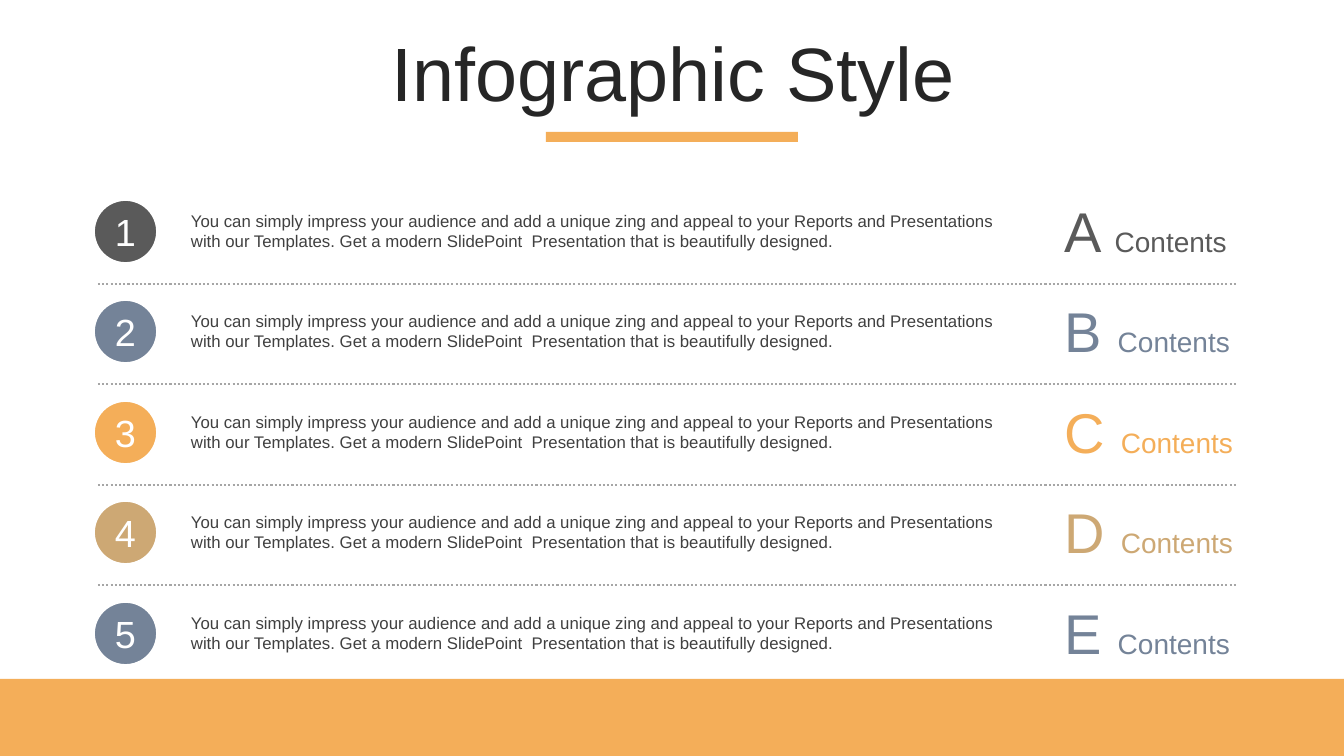
from lxml import etree
from pptx import Presentation
from pptx.dml.color import RGBColor
from pptx.enum.dml import MSO_LINE
from pptx.enum.shapes import MSO_CONNECTOR, MSO_SHAPE
from pptx.enum.text import MSO_ANCHOR, MSO_AUTO_SIZE, PP_ALIGN
from pptx.oxml.ns import qn
from pptx.util import Pt

RECTANGLE = MSO_SHAPE.RECTANGLE
OVAL = MSO_SHAPE.OVAL
STRAIGHT = MSO_CONNECTOR.STRAIGHT
DOTTED = MSO_LINE.ROUND_DOT
CENTER = PP_ALIGN.CENTER
MIDDLE = MSO_ANCHOR.MIDDLE
FIT_SHAPE = MSO_AUTO_SIZE.SHAPE_TO_FIT_TEXT
NO_FIT = MSO_AUTO_SIZE.NONE

SLIDE_WIDTH, SLIDE_HEIGHT = 1344, 756
SCALE = 12192000 / SLIDE_WIDTH
FONT = "Arial"
COLORS = {
    "title": "262626",
    "body": "404040",
    "divider": "A6A6A6",
    "white": "FFFFFF",
    "gray": "5A5A5A",
    "blue": "748398",
    "orange": "F4AE59",
    "tan": "CDA874",
}
DESCRIPTION = (
    "You can simply impress your audience and add a unique zing and appeal "
    "to your Reports and Presentations with our Templates. Get a modern "
    "SlidePoint  Presentation that is beautifully designed."
)
ROWS = [("A", "gray"), ("B", "blue"), ("C", "orange"), ("D", "tan"), ("E", "blue")]
FIRST_ROW_TOP = 200
ROW_PITCH_DOUBLED = 201


def emu(*lengths):
    return [round(length * SCALE) for length in lengths]


def rgb(color):
    return RGBColor.from_string(COLORS[color])


class InfographicSlide:
    def __init__(self, presentation):
        self.slide = presentation.slides.add_slide(presentation.slide_layouts[5])
        self.shapes = self.slide.shapes

    def style(self, font, size, color):
        font.name = FONT
        font.size = Pt(size)
        font.color.rgb = rgb(color)

    def title(self, text, left, top, width, height):
        shape = self.shapes.title
        shape.left, shape.top, shape.width, shape.height = emu(left, top, width, height)
        frame = shape.text_frame
        frame.text = text
        frame.auto_size = NO_FIT
        frame.vertical_anchor = MIDDLE
        paragraph = frame.paragraphs[0]
        paragraph.alignment = CENTER
        paragraph.line_spacing = 0.9
        paragraph.space_before = Pt(10)
        self.style(paragraph.font, 54, "title")

    def filled(self, kind, color, left, top, width, height):
        shape = self.shapes.add_shape(kind, *emu(left, top, width, height))
        shape.shadow.inherit = False
        shape.fill.solid()
        shape.fill.fore_color.rgb = rgb(color)
        shape.line.fill.background()
        return shape

    def badge(self, number, color, left, top, size):
        shape = self.filled(OVAL, color, left, top, size, size)
        shape.line.color.rgb = rgb("white")
        shape.line.width = Pt(1.25)
        frame = shape.text_frame
        frame.margin_left = frame.margin_right = 0
        frame.margin_top = frame.margin_bottom = 0
        frame.vertical_anchor = MIDDLE
        frame.text = str(number)
        paragraph = frame.paragraphs[0]
        paragraph.alignment = CENTER
        self.style(paragraph.font, 27, "white")

    def text_box(self, left, top, width, height):
        frame = self.shapes.add_textbox(*emu(left, top, width, height)).text_frame
        frame.word_wrap = True
        frame.auto_size = FIT_SHAPE
        return frame.paragraphs[0]

    def description(self, text, left, top, width, height):
        paragraph = self.text_box(left, top, width, height)
        paragraph.text = text
        self.style(paragraph.font, 12, "body")

    def label(self, letter, color, left, top, width, height):
        paragraph = self.text_box(left, top, width, height)
        for text, size in ((letter + " ", 40), ("Contents", 20)):
            run = paragraph.add_run()
            run.text = text
            self.style(run.font, size, color)

    def divider(self, left, right, y):
        connector = self.shapes.add_connector(STRAIGHT, *emu(left, y, right, y))
        connector.line.color.rgb = rgb("divider")
        connector.line.width = Pt(1.5)
        connector.line.dash_style = DOTTED
        etree.SubElement(connector._element.spPr, qn("a:effectLst"))


def main():
    presentation = Presentation()
    presentation.slide_width, presentation.slide_height = emu(SLIDE_WIDTH, SLIDE_HEIGHT)
    page = InfographicSlide(presentation)
    page.filled(RECTANGLE, "orange", 546, 132, 252, 10)
    page.filled(RECTANGLE, "orange", 0, 679, SLIDE_WIDTH, 77)
    page.title("Infographic Style", 35, 37, 1276, 80)
    for index, (letter, color) in enumerate(ROWS):
        top = FIRST_ROW_TOP + index * ROW_PITCH_DOUBLED // 2
        page.badge(index + 1, color, 94, top, 63)
        page.description(DESCRIPTION, 181, top + 6, 827, 50)
        page.label(letter, color, 1055, top - 8, 192, 78)
        if index < len(ROWS) - 1:
            page.divider(98, 1236, top + 84)
    presentation.save("out.pptx")


if __name__ == "__main__":
    main()
